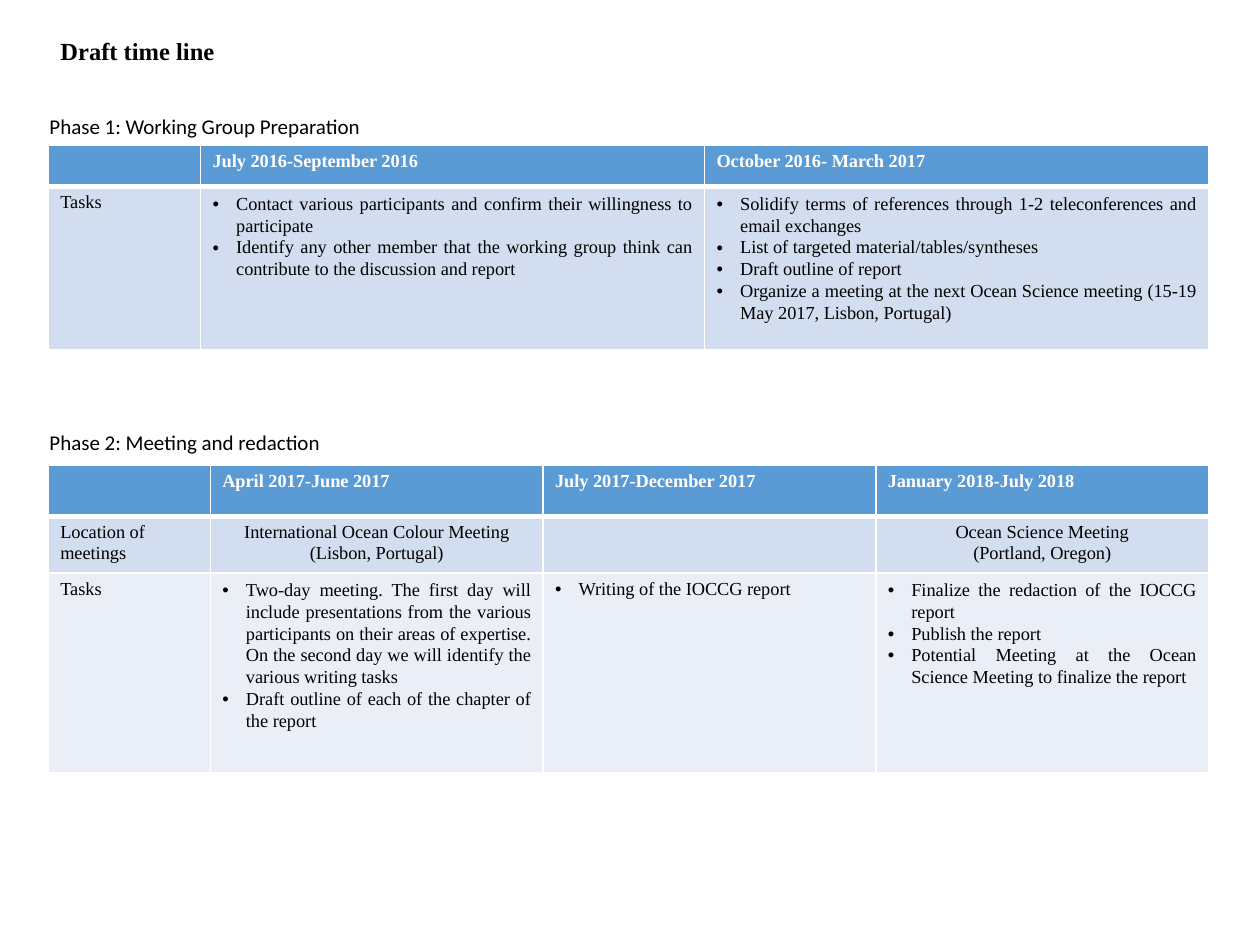
from pptx import Presentation
from pptx.util import Pt
from pptx.dml.color import RGBColor as Rgb
from pptx.enum.text import PP_ALIGN as Align, MSO_AUTO_SIZE as Auto
from pptx.oxml.ns import qn
from lxml.etree import SubElement as Sub

COLORS = {
    "white": "FFFFFF",
    "black": "000000",
    "head": "5B9BD5",
    "band": "D2DEEF",
    "pale": "EAEFF7",
}
SERIF = "Times New Roman"
SIZE = 10.5
INDENT = 13.5


def write(frame, lines, font=SERIF, size=SIZE, color="black", bold=False,
          align=None, space=None, bullet=False):
    frame.word_wrap = True
    for num, line in enumerate(lines):
        para = frame.add_paragraph() if num else frame.paragraphs[0]
        para.alignment = align
        if space:
            para.line_spacing = space
        if bullet:
            props = para._p.get_or_add_pPr()
            props.set("marL", str(Pt(INDENT)))
            props.set("indent", str(-Pt(INDENT)))
            Sub(props, qn("a:buFont"), typeface="Arial")
            Sub(props, qn("a:buChar"), char="•")
        run = para.add_run()
        run.text = line
        run.font.name = font
        run.font.size = Pt(size)
        run.font.bold = bold
        run.font.color.rgb = Rgb.from_string(COLORS[color])


def label(slide, box, line, **form):
    shape = slide.shapes.add_textbox(*map(Pt, box))
    write(shape.text_frame, [line], **form)
    shape.text_frame.auto_size = Auto.SHAPE_TO_FIT_TEXT


def edge(cell, side, width):
    line = Sub(cell._tc.get_or_add_tcPr(), qn("a:ln" + side), w=str(Pt(width)))
    fill = Sub(line, qn("a:solidFill"))
    Sub(fill, qn("a:srgbClr"), val=COLORS["white"])


def paint(cell, row):
    cell.margin_left = cell.margin_right = Pt(6.8)
    cell.margin_top = cell.margin_bottom = Pt(3.4)
    for side in "LRTB":
        thick = (row, side) in ((0, "B"), (1, "T"))
        edge(cell, side, 3 if thick else 1)
    cell.fill.solid()
    shade = ("head", "band", "pale")[row]
    cell.fill.fore_color.rgb = Rgb.from_string(COLORS[shade])


def grid(slide, box, first, highs, rows):
    count = len(rows[0])
    table = slide.shapes.add_table(len(rows), count, *map(Pt, box)).table
    table.horz_banding = False
    rest = (box[2] - first) / (count - 1)
    for num, col in enumerate(table.columns):
        col.width = Pt(rest if num else first)
    for row, (high, cells) in enumerate(zip(highs, rows)):
        table.rows[row].height = Pt(high)
        for col, (lines, form) in enumerate(cells):
            cell = table.cell(row, col)
            paint(cell, row)
            if lines:
                write(cell.text_frame, lines, **form)
            else:
                para = cell.text_frame.paragraphs[0]._p
                Sub(para, qn("a:endParaRPr"), sz=str(int(SIZE * 100)))


def phase(slide, box, gap, name, first, highs, rows):
    left, top, wide, high = box
    label(slide, (left - 6.5, top, 335.5, 21.6), name, font="Calibri", size=12)
    grid(slide, (left, top + gap, wide, high - gap), first, highs, rows)


def head(*names):
    form = dict(color="white", bold=True)
    return [([], {})] + [([name], form) for name in names]


def plain(*lines, align=None):
    return lines, dict(align=align)


def items(*lines, align=Align.JUSTIFY, space=1.07):
    return lines, dict(align=align, space=space, bullet=True)


def main():
    deck = Presentation()
    deck.slide_width, deck.slide_height = Pt(720), Pt(540)
    slide = deck.slides.add_slide(deck.slide_layouts[6])
    label(slide, (27.5, 15.8, 668, 25.2), "Draft time line",
          size=14, bold=True, space=1.07)
    phase(slide, (27.7, 61.2, 663, 138.4), 21.6,
          "Phase 1: Working Group Preparation", 87, (23.9, 92.9), [
              head("July 2016-September 2016", "October 2016- March 2017"),
              [plain("Tasks"),
               items("Contact various participants and confirm their "
                     "willingness to participate",
                     "Identify any other member that the working group think "
                     "can contribute to the discussion and report"),
               items("Solidify terms of references through 1-2 "
                     "teleconferences and email exchanges",
                     "List of targeted material/tables/syntheses",
                     "Draft outline of report",
                     "Organize a meeting at the next Ocean Science meeting "
                     "(15-19 May 2017, Lisbon, Portugal)")],
          ])
    phase(slide, (27.7, 242.2, 663, 199.2), 23.6,
          "Phase 2: Meeting and redaction", 92.6, (29.4, 32.2, 114), [
              head("April 2017-June 2017", "July 2017-December 2017",
                   "January 2018-July 2018"),
              [plain("Location of meetings"),
               plain("International Ocean Colour Meeting (Lisbon, Portugal)",
                     align=Align.CENTER),
               plain(),
               plain("Ocean Science Meeting", "(Portland, Oregon)",
                     align=Align.CENTER)],
              [plain("Tasks"),
               items("Two-day meeting. The first day will include "
                     "presentations from the various participants on their "
                     "areas of expertise. On the second day we will identify "
                     "the various writing tasks",
                     "Draft outline of each of the chapter of the report"),
               items("Writing of the IOCCG report", align=None, space=None),
               items("Finalize the redaction of the IOCCG report",
                     "Publish the report",
                     "Potential Meeting at the Ocean Science Meeting to "
                     "finalize the report")],
          ])
    deck.save("out.pptx")


if __name__ == "__main__":
    main()
